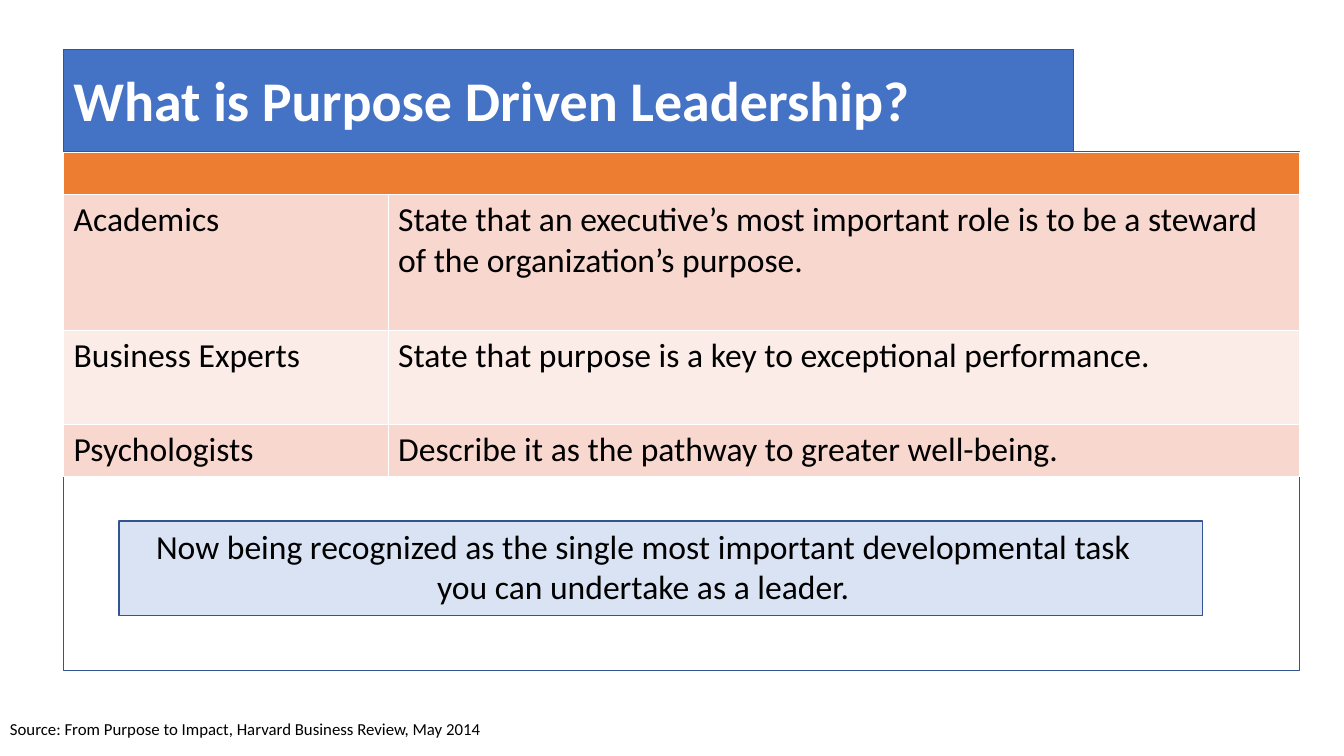
from dataclasses import dataclass
from typing import Optional

from pptx import Presentation
from pptx.dml.color import RGBColor
from pptx.enum.shapes import MSO_SHAPE
from pptx.enum.text import MSO_ANCHOR, PP_ALIGN
from pptx.util import Inches, Pt

WHITE = RGBColor(0xFF, 0xFF, 0xFF)
BLACK = RGBColor(0x00, 0x00, 0x00)
BLUE = RGBColor(0x44, 0x72, 0xC4)
NAVY = RGBColor(0x32, 0x54, 0x91)
PALE_BLUE = RGBColor(0xDA, 0xE3, 0xF3)
ORANGE = RGBColor(0xED, 0x7D, 0x31)
BANDS = (RGBColor(0xF8, 0xD7, 0xCE), RGBColor(0xFC, 0xEC, 0xE8))

FONT = "Calibri"
WIDTH, HEIGHT = Inches(13.33), Inches(7.5)
LEFT, TOP = 4.73, 20.13
COLUMNS = (24.15, 67.8)
ROWS = (5.6, 18, 12.4, 6.93)


def across(percent: float) -> int:
    return round(WIDTH * percent / 100)


def down(percent: float) -> int:
    return round(HEIGHT * percent / 100)


@dataclass(frozen=True)
class Area:
    left: float
    top: float
    width: float
    height: float

    def lengths(self) -> tuple[int, int, int, int]:
        return across(self.left), down(self.top), across(self.width), down(self.height)


@dataclass(frozen=True)
class Panel:
    area: Area
    fill: Optional[RGBColor] = None


@dataclass(frozen=True)
class Label:
    area: Area
    text: str
    size: int
    color: RGBColor = BLACK
    bold: bool = False
    align: PP_ALIGN = PP_ALIGN.LEFT
    anchor: MSO_ANCHOR = MSO_ANCHOR.TOP
    spacing: float = 1.0


@dataclass(frozen=True)
class View:
    group: str
    statement: str


BACK_PANELS = (
    Panel(Area(8.85, 68.93, 80.63, 12.53), PALE_BLUE),
    Panel(Area(LEFT, 6.53, 75.15, 13.6), BLUE),
    Panel(Area(LEFT, TOP, sum(COLUMNS), 68.53)),
)
VIEWS = (
    View("Academics", "State that an executive’s most important role is to be a steward of the organization’s purpose."),
    View("Business Experts", "State that purpose is a key to exceptional performance."),
    View("Psychologists", "Describe it as the pathway to greater well-being."),
)
LABELS = (
    Label(Area(LEFT, 4, 86.25, 19.33), "What is Purpose Driven Leadership?", 40,
          WHITE, True, anchor=MSO_ANCHOR.MIDDLE, spacing=0.9),
    Label(Area(0, 94.4, 73.73, 4), "Source: From Purpose to Impact, Harvard Business Review, May 2014", 12),
    Label(Area(9.3, 68.93, 77.1, 12.13),
          "Now being recognized as the single most important developmental task you can undertake as a leader.",
          24, align=PP_ALIGN.CENTER),
)


def style(p, size: int, color: RGBColor, bold: bool = False) -> None:
    p.font.name = FONT
    p.font.size = Pt(size)
    p.font.bold = bold
    p.font.color.rgb = color


def draw_panel(slide, panel: Panel) -> None:
    sp = slide.shapes.add_shape(MSO_SHAPE.RECTANGLE, *panel.area.lengths())
    sp.shadow.inherit = False
    if panel.fill is None:
        sp.fill.background()
    else:
        sp.fill.solid()
        sp.fill.fore_color.rgb = panel.fill
    sp.line.color.rgb = NAVY
    sp.line.width = Pt(1)


def draw_label(slide, label: Label) -> None:
    tf = slide.shapes.add_textbox(*label.area.lengths()).text_frame
    tf.word_wrap = True
    tf.vertical_anchor = label.anchor
    p = tf.paragraphs[0]
    p.text = label.text
    p.alignment = label.align
    p.line_spacing = label.spacing
    style(p, label.size, label.color, label.bold)


def fill_cell(cell, color: RGBColor) -> None:
    cell.fill.solid()
    cell.fill.fore_color.rgb = color


def draw_views(slide) -> None:
    area = Area(LEFT, TOP, sum(COLUMNS), sum(ROWS))
    table = slide.shapes.add_table(len(ROWS), len(COLUMNS), *area.lengths()).table
    table.horz_banding = False
    for column, share in zip(table.columns, COLUMNS):
        column.width = across(share)
    for row, share in zip(table.rows, ROWS):
        row.height = down(share)
    header = table.cell(0, 0)
    header.merge(table.cell(0, 1))
    fill_cell(header, ORANGE)
    for i, view in enumerate(VIEWS):
        for j, text in enumerate((view.group, view.statement)):
            cell = table.cell(i + 1, j)
            fill_cell(cell, BANDS[i % 2])
            cell.text = text
            style(cell.text_frame.paragraphs[0], 24, BLACK)


def main() -> None:
    prs = Presentation()
    prs.slide_width, prs.slide_height = WIDTH, HEIGHT
    slide = prs.slides.add_slide(prs.slide_layouts[6])
    for panel in BACK_PANELS:
        draw_panel(slide, panel)
    draw_views(slide)
    for label in LABELS:
        draw_label(slide, label)
    prs.save("out.pptx")


if __name__ == "__main__":
    main()
